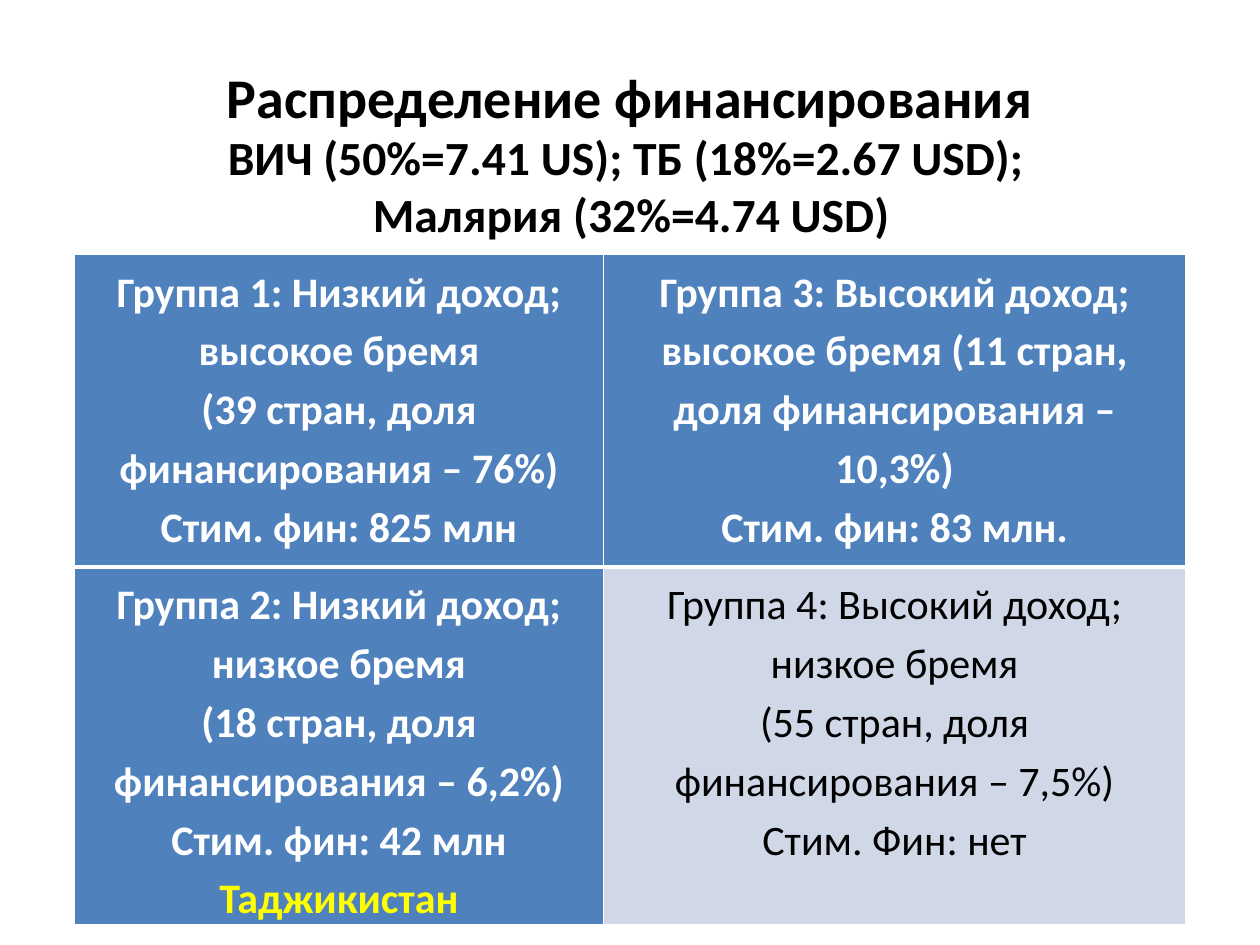
from lxml.etree import SubElement
from pptx import Presentation
from pptx.dml.color import RGBColor
from pptx.enum.text import MSO_ANCHOR, PP_ALIGN
from pptx.oxml.ns import qn
from pptx.util import Inches, Pt


def color(value):
    return RGBColor.from_string(value)


class SlideBuilder:
    font = "Calibri"
    black = "000000"
    white = "FFFFFF"
    yellow = "FFFF00"
    blue = "4F81BD"
    pale = "D0D8E8"

    def __init__(self, presentation):
        self.slide = presentation.slides.add_slide(presentation.slide_layouts[6])

    def fill_text(self, text_frame, lines, size, text_color, bold=True, spacing=1.0):
        text_frame.word_wrap = True
        text_frame.text = "\n".join(lines)
        for paragraph in text_frame.paragraphs:
            paragraph.alignment = PP_ALIGN.CENTER
            paragraph.line_spacing = spacing
            for run in paragraph.runs:
                run.font.name = self.font
                run.font.size = Pt(size)
                run.font.bold = bold
                run.font.color.rgb = color(text_color)

    def text(self, left, top, width, height, lines, size):
        shape = self.slide.shapes.add_textbox(
            Inches(left), Inches(top), Inches(width), Inches(height)
        )
        shape.text_frame.vertical_anchor = MSO_ANCHOR.MIDDLE
        self.fill_text(shape.text_frame, lines, size, self.black)

    def border(self, cell, widths):
        properties = cell._tc.get_or_add_tcPr()
        for index, (side, width) in enumerate(widths.items()):
            line = properties.makeelement(qn(f"a:{side}"), {"w": str(Pt(width))})
            fill = SubElement(line, qn("a:solidFill"))
            SubElement(fill, qn("a:srgbClr"), val=self.white)
            properties.insert(index, line)

    def cell(self, cell, lines, fill, text_color, bold, widths):
        cell.margin_left = cell.margin_right = Inches(0.07)
        cell.margin_top = cell.margin_bottom = Inches(0.04)
        cell.fill.solid()
        cell.fill.fore_color.rgb = color(fill)
        self.fill_text(cell.text_frame, lines, 24, text_color, bold, 1.15)
        self.border(cell, widths)

    def table(self, left, top, columns, rows, groups):
        table = self.slide.shapes.add_table(
            len(rows), len(columns), Inches(left), Inches(top),
            Inches(sum(columns)), Inches(sum(rows)),
        ).table
        for column, width in zip(table.columns, columns):
            column.width = Inches(width)
        for row, height in zip(table.rows, rows):
            row.height = Inches(height)
        for row, row_groups in enumerate(groups):
            widths = {"lnL": 1, "lnR": 1, "lnT": 3 if row else 1, "lnB": 1 if row else 3}
            for column, (lines, fill, text_color, bold) in enumerate(row_groups):
                self.cell(table.cell(row, column), lines, fill, text_color, bold, widths)
        return table


def main():
    presentation = Presentation()
    presentation.slide_width = Inches(10)
    presentation.slide_height = Inches(7.5)
    builder = SlideBuilder(presentation)
    strong = (builder.blue, builder.white, True)
    plain = (builder.pale, builder.black, False)

    builder.text(0.5, 0.3, 9, 0.93, ["Распределение финансирования"], 32)
    groups = [
        [
            (["Группа 1: Низкий доход; высокое бремя",
              "(39 стран, доля финансирования – 76%)",
              "Стим. фин: 825 млн"], *strong),
            (["Группа 3: Высокий доход; высокое бремя (11 стран, доля финансирования – 10,3%)",
              "Стим. фин: 83 млн."], *strong),
        ],
        [
            (["Группа 2: Низкий доход; низкое бремя",
              "(18 стран, доля финансирования – 6,2%)",
              "Стим. фин: 42 млн",
              "Таджикистан"], *strong),
            (["Группа 4: Высокий доход; низкое бремя",
              "(55 стран, доля финансирования – 7,5%)",
              "Стим. Фин: нет"], *plain),
        ],
    ]
    table = builder.table(0.59, 2.02, [4.2, 4.62], [2.48, 2.72], groups)
    country = table.cell(1, 0).text_frame.paragraphs[-1]
    country.runs[0].font.color.rgb = color(builder.yellow)
    builder.text(0.51, 1.03, 9, 0.88,
                 ["ВИЧ (50%=7.41 US); ТБ (18%=2.67 USD); ", "Малярия (32%=4.74 USD)"], 27.2)
    presentation.save("out.pptx")


if __name__ == "__main__":
    main()
